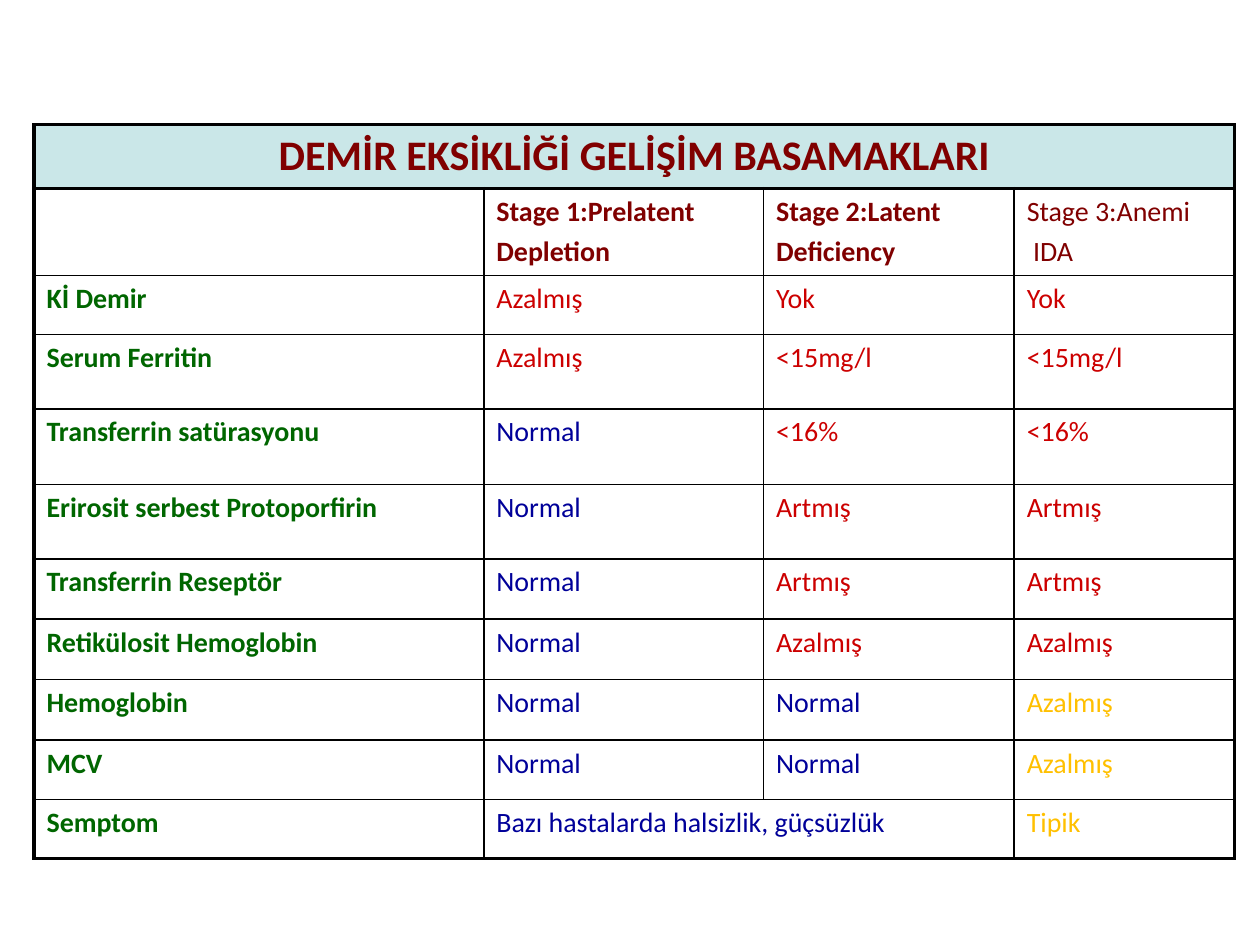
from dataclasses import dataclass

from lxml import etree
from pptx import Presentation, util as u
from pptx.dml import color as dml
from pptx.enum import text
from pptx.oxml import ns


@dataclass(frozen=True)
class Theme:
    font: str = "Calibri"
    title_size: int = 24
    body_size: int = 16
    thick: float = 2.25
    thin: float = 1
    line: str = "000000"
    banner: str = "CAE7E8"
    heading: str = "800000"
    label: str = "006600"
    abnormal: str = "CC0000"
    normal: str = "000099"
    anemia: str = "FFC000"


THEME = Theme()
TITLE = "DEMİR EKSİKLİĞİ GELİŞİM BASAMAKLARI"
STAGES = [
    ("Stage 1:Prelatent", "Depletion"),
    ("Stage 2:Latent", "Deficiency"),
    ("Stage 3:Anemi", " IDA"),
]
FINDINGS = [
    ("Kİ Demir", "Azalmış", "Yok", "Yok"),
    ("Serum Ferritin", "Azalmış", "<15mg/l", "<15mg/l"),
    ("Transferrin satürasyonu", "Normal", "<16%", "<16%"),
    ("Erirosit serbest Protoporfirin", "Normal", "Artmış", "Artmış"),
    ("Transferrin Reseptör", "Normal", "Artmış", "Artmış"),
    ("Retikülosit Hemoglobin", "Normal", "Azalmış", "Azalmış"),
    ("Hemoglobin", "Normal", "Normal", "Azalmış"),
    ("MCV", "Normal", "Normal", "Azalmış"),
    ("Semptom", "Bazı hastalarda halsizlik, güçsüzlük", "", "Tipik"),
]
COLUMN_WIDTHS = [3.57, 2.22, 1.99, 1.75]
ROW_HEIGHTS = [0.47, 0.65, 0.47, 0.59, 0.6, 0.59, 0.48, 0.48, 0.48, 0.47, 0.47]
THICK_ROW_LINES = {0, 1, len(ROW_HEIGHTS)}
THICK_COLUMN_LINES = {0, len(COLUMN_WIDTHS)}


def add_element(parent, tag, **attributes):
    return etree.SubElement(parent, ns.qn(tag), attributes)


def set_borders(cell, row, column):
    properties = cell._tc.get_or_add_tcPr()
    right = column + (cell.span_width if cell.is_merge_origin else 1)
    edges = [
        ("a:lnL", column in THICK_COLUMN_LINES),
        ("a:lnR", right in THICK_COLUMN_LINES),
        ("a:lnT", row in THICK_ROW_LINES),
        ("a:lnB", row + 1 in THICK_ROW_LINES),
    ]
    for tag, is_thick in edges:
        width = u.Pt(THEME.thick if is_thick else THEME.thin)
        line = add_element(properties, tag, w=str(width))
        add_element(add_element(line, "a:solidFill"), "a:srgbClr", val=THEME.line)


def write_cell(cell, lines, color, bold=False, size=THEME.body_size, align=text.PP_ALIGN.LEFT):
    for index, words in enumerate(lines):
        frame = cell.text_frame
        paragraph = frame.add_paragraph() if index else frame.paragraphs[0]
        paragraph.alignment = align
        spacing = add_element(paragraph._p.get_or_add_pPr(), "a:spcBef")
        add_element(spacing, "a:spcPct", val="20000")
        run = paragraph.add_run()
        run.text = words
        run.font.name = THEME.font
        run.font.size = u.Pt(size)
        run.font.bold = bold
        run.font.color.rgb = dml.RGBColor.from_string(color)


def finding_color(finding, column):
    if finding[0] == "Semptom" and column == 1:
        return THEME.normal
    if finding[column] == "Normal":
        return THEME.normal
    if column == 3 and finding[0] in ("Hemoglobin", "MCV", "Semptom"):
        return THEME.anemia
    return THEME.abnormal


def add_stage_table(slide, left, top, width, height):
    frame = slide.shapes.add_table(
        len(ROW_HEIGHTS), len(COLUMN_WIDTHS), left, top, width, height
    )
    table = frame.table
    table.first_row = table.horz_banding = False
    for column, size in zip(table.columns, COLUMN_WIDTHS):
        column.width = int(width * size / sum(COLUMN_WIDTHS))
    for row, size in zip(table.rows, ROW_HEIGHTS):
        row.height = u.Inches(size)
    last = len(ROW_HEIGHTS) - 1
    table.cell(0, 0).merge(table.cell(0, 3))
    table.cell(last, 1).merge(table.cell(last, 2))

    for row in range(len(ROW_HEIGHTS)):
        for column in range(len(COLUMN_WIDTHS)):
            cell = table.cell(row, column)
            if not cell.is_spanned:
                set_borders(cell, row, column)
            cell.fill.background()

    banner = table.cell(0, 0)
    banner.fill.solid()
    banner.fill.fore_color.rgb = dml.RGBColor.from_string(THEME.banner)
    write_cell(banner, [TITLE], THEME.heading, True, THEME.title_size, text.PP_ALIGN.CENTER)
    for column, lines in enumerate(STAGES, start=1):
        write_cell(table.cell(1, column), lines, THEME.heading, bold=column < 3)
    for row, finding in enumerate(FINDINGS, start=2):
        write_cell(table.cell(row, 0), finding[:1], THEME.label, bold=True)
        for column in range(1, len(finding)):
            cell = table.cell(row, column)
            if not cell.is_spanned:
                write_cell(cell, [finding[column]], finding_color(finding, column))


def main():
    presentation = Presentation()
    presentation.slide_width = u.Inches(10)
    presentation.slide_height = u.Inches(7.5)
    slide = presentation.slides.add_slide(presentation.slide_layouts[6])
    add_stage_table(slide, u.Inches(0.27), u.Inches(0.99), u.Inches(9.53), u.Inches(5.91))
    presentation.save("out.pptx")


if __name__ == "__main__":
    main()
